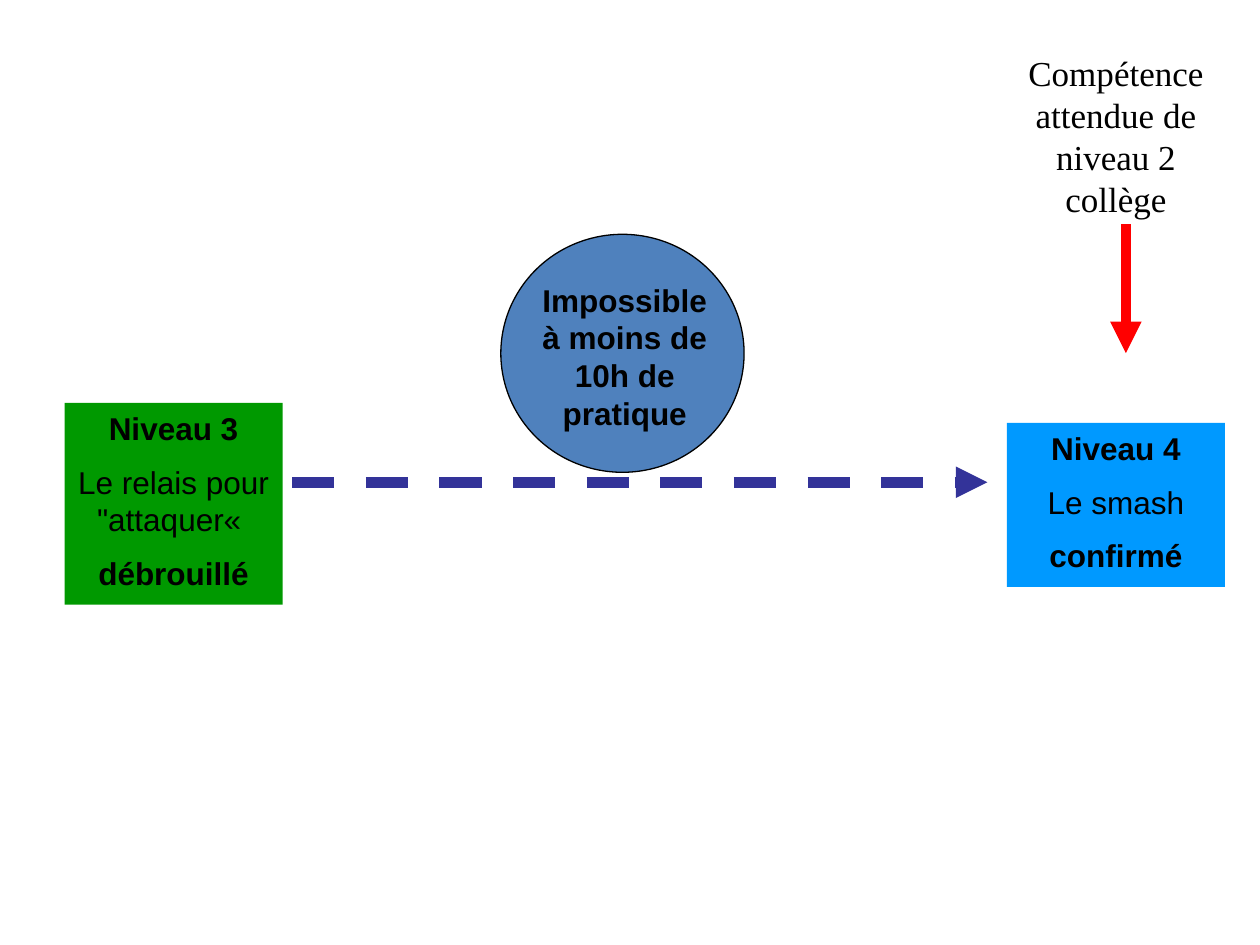
from dataclasses import dataclass

from lxml.etree import SubElement
from pptx import Presentation
from pptx.dml.color import RGBColor
from pptx.enum.dml import MSO_LINE
from pptx.enum.shapes import MSO_CONNECTOR, MSO_SHAPE
from pptx.enum.text import MSO_ANCHOR, PP_ALIGN
from pptx.oxml.ns import qn
from pptx.util import Pt

BLACK = "000000"


@dataclass(frozen=True)
class Level:
    left: float
    top: float
    width: float
    height: float
    fill: str
    name: str
    skill: str
    mastery: str


@dataclass(frozen=True)
class Arrow:
    start: tuple[float, float]
    end: tuple[float, float]
    color: str
    dashed: bool = False


LEVELS = [
    Level(36.9, 230.2, 124.6, 115.3, "009900",
          "Niveau 3", 'Le relais pour "attaquer« ', "débrouillé"),
    Level(575.4, 241.6, 124.6, 93.8, "0099FF",
          "Niveau 4", "Le smash", "confirmé"),
]
PROGRESSION = Arrow((167, 275.6), (564.2, 275.6), "333399", dashed=True)
EXPECTATION = Arrow((643.4, 128.2), (643.4, 201.8), "FF0000")


def rgb(color: str) -> RGBColor:
    return RGBColor.from_string(color)


def add_paragraph(frame, text: str, *, first=False, size=18, font="Arial",
                  bold=False, color=BLACK) -> None:
    paragraph = frame.paragraphs[0] if first else frame.add_paragraph()
    paragraph.alignment = PP_ALIGN.CENTER
    paragraph.space_before = Pt(size / 2)
    run = paragraph.add_run()
    run.text = text
    run.font.size = Pt(size)
    run.font.name = font
    run.font.bold = bold
    run.font.color.rgb = rgb(color)


def add_level(slide, level: Level) -> None:
    box = slide.shapes.add_shape(MSO_SHAPE.RECTANGLE, Pt(level.left), Pt(level.top),
                                 Pt(level.width), Pt(level.height))
    box.shadow.inherit = False
    box.fill.solid()
    box.fill.fore_color.rgb = rgb(level.fill)
    box.line.fill.background()
    frame = box.text_frame
    frame.word_wrap = True
    frame.vertical_anchor = MSO_ANCHOR.TOP
    add_paragraph(frame, level.name, first=True, bold=True)
    add_paragraph(frame, level.skill)
    add_paragraph(frame, level.mastery, bold=True)


def add_arrow(slide, arrow: Arrow) -> None:
    connector = slide.shapes.add_connector(
        MSO_CONNECTOR.STRAIGHT, *map(Pt, arrow.start + arrow.end))
    connector.line.color.rgb = rgb(arrow.color)
    connector.line.width = Pt(6)
    if arrow.dashed:
        connector.line.dash_style = MSO_LINE.DASH
    properties = connector.element.spPr
    SubElement(properties.find(qn("a:ln")), qn("a:tailEnd"), type="triangle")
    SubElement(properties, qn("a:effectLst"))


def add_caption(slide, text: str, left: float, top: float, width: float,
                height: float, **text_format) -> None:
    caption = slide.shapes.add_textbox(Pt(left), Pt(top), Pt(width), Pt(height))
    caption.text_frame.word_wrap = True
    add_paragraph(caption.text_frame, text, first=True, **text_format)


def add_condition_circle(slide) -> None:
    circle = slide.shapes.add_shape(MSO_SHAPE.OVAL, Pt(286.2), Pt(133.9),
                                    Pt(139), Pt(136))
    circle.shadow.inherit = False
    circle.fill.solid()
    circle.fill.fore_color.rgb = rgb("4F81BD")
    circle.line.color.rgb = rgb(BLACK)
    circle.line.width = Pt(0.75)


def main() -> None:
    presentation = Presentation()
    presentation.slide_width, presentation.slide_height = Pt(720), Pt(540)
    slide = presentation.slides.add_slide(presentation.slide_layouts[6])
    start_level, target_level = LEVELS
    add_arrow(slide, PROGRESSION)
    add_level(slide, start_level)
    add_caption(slide, "Compétence attendue de niveau 2 collège",
                target_level.left, 26, target_level.width, 103,
                size=20, font="Times New Roman")
    add_arrow(slide, EXPECTATION)
    add_condition_circle(slide)
    add_caption(slide, "Impossible à moins de 10h de pratique",
                297.6, 156.8, 118.8, 93.6, bold=True)
    add_level(slide, target_level)
    presentation.save("out.pptx")


if __name__ == "__main__":
    main()
